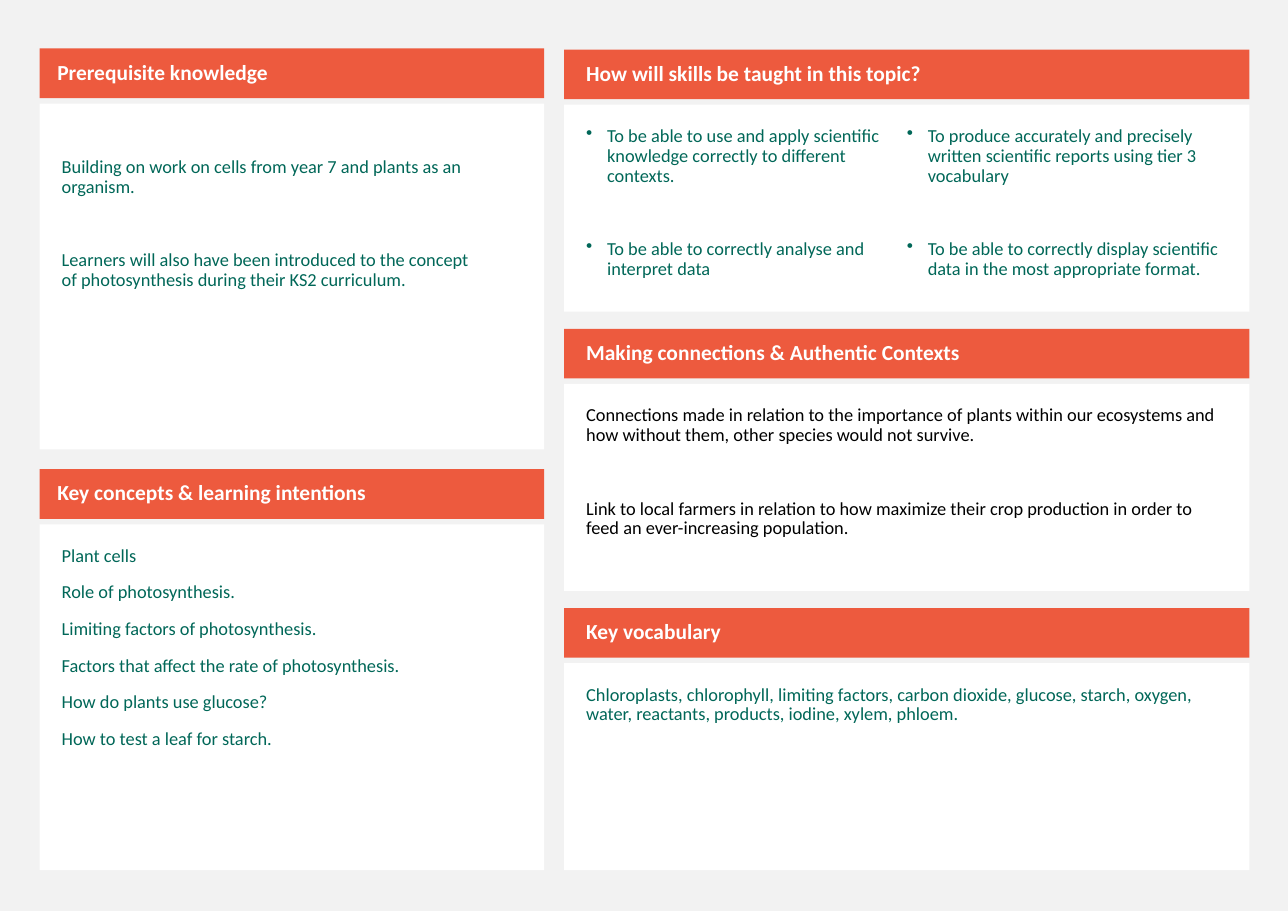
import pptx
import pptx.dml.color
import pptx.enum.shapes
import pptx.enum.text
import pptx.util
import lxml.etree

Inches, Pt = pptx.util.Inches, pptx.util.Pt
COLOURS = {"page": "F2F2F2", "header": "ED5A3E", "panel": "FFFFFF",
           "title": "FFFFFF", "green": "006758", "black": "000000"}

# Content: each column has its place, and its panels from top to bottom
# "gap" is the space in points between paragraphs
COLUMNS = [
    {"left": 0.36, "width": 4.58, "first": 0.44, "last": 4.26,
     "panel_height": 3.14, "title_inset": 0.16, "panels": [
        {"title": "Prerequisite knowledge",
         "gap": 35, "insets": {"margin_top": 0.49, "margin_right": 0.55},
         "text": ["Building on work on cells from year 7 and plants as an organism.",
                  "Learners will also have been introduced to the concept of "
                  "photosynthesis during their KS2 curriculum."]},
        {"title": "Key concepts & learning intentions",
         "text": ["Plant cells",
                  "Role of photosynthesis.",
                  "Limiting factors of photosynthesis.",
                  "Factors that affect the rate of photosynthesis.",
                  "How do plants use glucose?",
                  "How to test a leaf for starch."]}]},
    {"left": 5.12, "width": 6.22, "first": 0.45, "last": 5.52,
     "panel_height": 1.88, "title_inset": 0.2, "panels": [
        {"title": "How will skills be taught in this topic?",
         "gap": 35, "bullets": True, "text_columns": 2,
         "text": ["To be able to use and apply scientific knowledge correctly "
                  "to different contexts.",
                  "To be able to correctly analyse and interpret data",
                  "To produce accurately and precisely written scientific "
                  "reports using tier 3 vocabulary",
                  "To be able to correctly display scientific data in the "
                  "most appropriate format."]},
        {"title": "Making connections & Authentic Contexts",
         "gap": 35, "colour": "black",
         "text": ["Connections made in relation to the importance of plants within "
                  "our ecosystems and how without them, other species would not survive.",
                  "Link to local farmers in relation to how maximize their crop "
                  "production in order to feed an ever-increasing population."]},
        {"title": "Key vocabulary",
         "text": ["Chloroplasts, chlorophyll, limiting factors, carbon dioxide, "
                  "glucose, starch, oxygen, water, reactants, products, iodine, "
                  "xylem, phloem."]}]},
]
HEADER_HEIGHT, PANEL_OFFSET = 0.45, 0.5
BULLET_INDENT = 0.19
PANEL_INSETS = {"margin_left": 0.2, "margin_top": 0.2,
                "margin_right": 0.2, "margin_bottom": 0.2}
TITLE_FONT = {"name": "Calibri", "size": Pt(14), "bold": True}
BODY_FONT = {"name": "Calibri", "size": Pt(12), "bold": False}


def colour(name):
    return pptx.dml.color.RGBColor.from_string(COLOURS[name])


def add_bullet(para):
    properties = para._p.get_or_add_pPr()
    properties.set("marL", str(Inches(BULLET_INDENT)))
    properties.set("indent", str(-Inches(BULLET_INDENT)))
    bullet = lxml.etree.SubElement(properties, pptx.oxml.ns.qn("a:buChar"))
    bullet.set("char", "•")


def add_box(page, place, fill, lines, font, font_colour, insets,
            anchor="TOP", gap=11, bullets=False, text_columns=1):
    box = page.shapes.add_shape(pptx.enum.shapes.MSO_SHAPE.RECTANGLE,
                                *[Inches(length) for length in place])
    box.shadow.inherit = False
    box.fill.solid()
    box.fill.fore_color.rgb = colour(fill)
    box.line.fill.background()

    frame = box.text_frame
    frame.word_wrap = True
    frame.vertical_anchor = getattr(pptx.enum.text.MSO_ANCHOR, anchor)
    for side, inset in insets.items():
        setattr(frame, side, Inches(inset))
    if text_columns > 1:
        frame._txBody.bodyPr.set("numCol", str(text_columns))

    for index, line in enumerate(lines):
        para = frame.add_paragraph() if index else frame.paragraphs[0]
        para.alignment = pptx.enum.text.PP_ALIGN.LEFT
        para.line_spacing = 0.9
        para.space_before = Pt(gap if index else 11)
        if bullets:
            add_bullet(para)
        span = para.add_run()
        span.text = line
        for attribute, value in font.items():
            setattr(span.font, attribute, value)
        span.font.color.rgb = colour(font_colour)


def main():
    deck = pptx.Presentation()
    deck.slide_width, deck.slide_height = Inches(11.69), Inches(8.27)
    page = deck.slides.add_slide(deck.slide_layouts[6])
    page.background.fill.solid()
    page.background.fill.fore_color.rgb = colour("page")

    for column in COLUMNS:
        panels = column["panels"]
        pitch = (column["last"] - column["first"]) / (len(panels) - 1)
        left, width = column["left"], column["width"]
        title_insets = {"margin_left": column["title_inset"]}
        for index, panel in enumerate(panels):
            top = column["first"] + index * pitch
            # Header bar
            add_box(page, (left, top, width, HEADER_HEIGHT), "header",
                    [panel["title"]], TITLE_FONT, "title", title_insets, "MIDDLE")
            # White panel below it
            add_box(page, (left, top + PANEL_OFFSET, width, column["panel_height"]),
                    "panel", panel["text"], BODY_FONT, panel.get("colour", "green"),
                    {**PANEL_INSETS, **panel.get("insets", {})},
                    gap=panel.get("gap", 11), bullets=panel.get("bullets", False),
                    text_columns=panel.get("text_columns", 1))

    deck.save("out.pptx")


if __name__ == "__main__":
    main()
